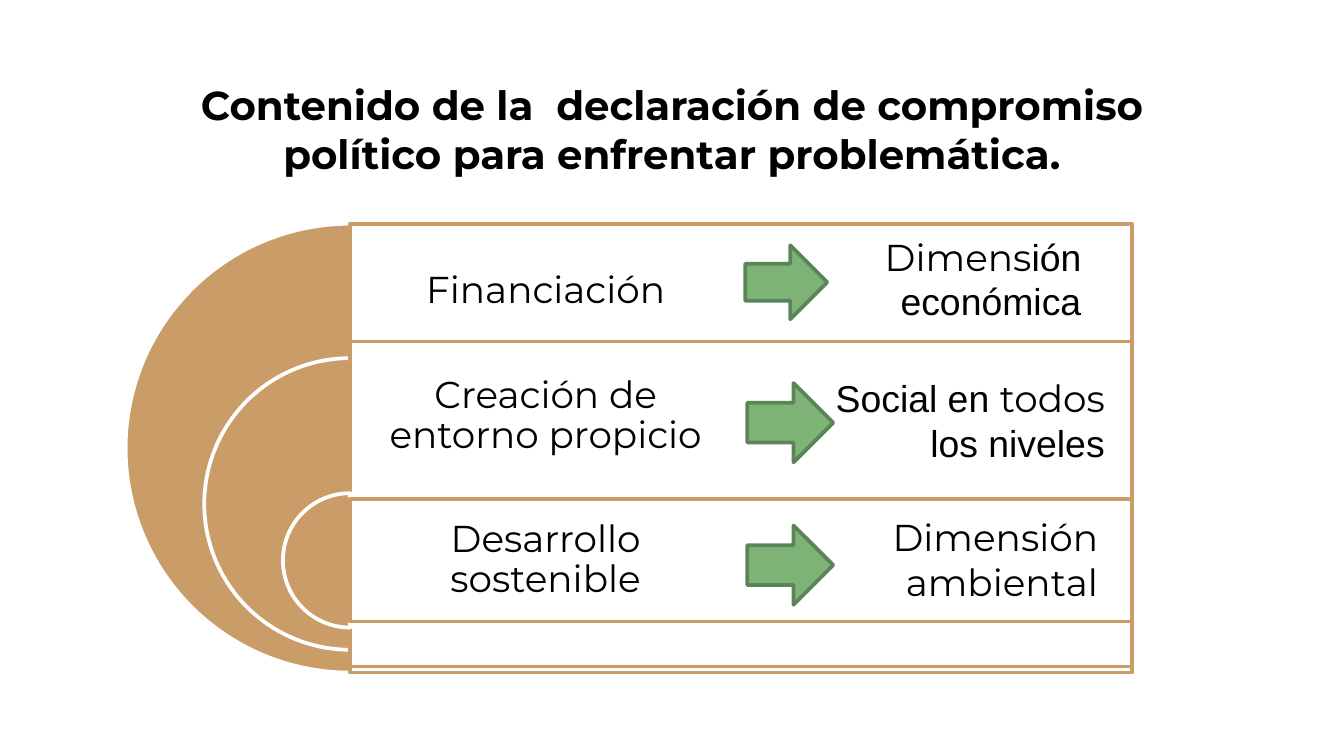
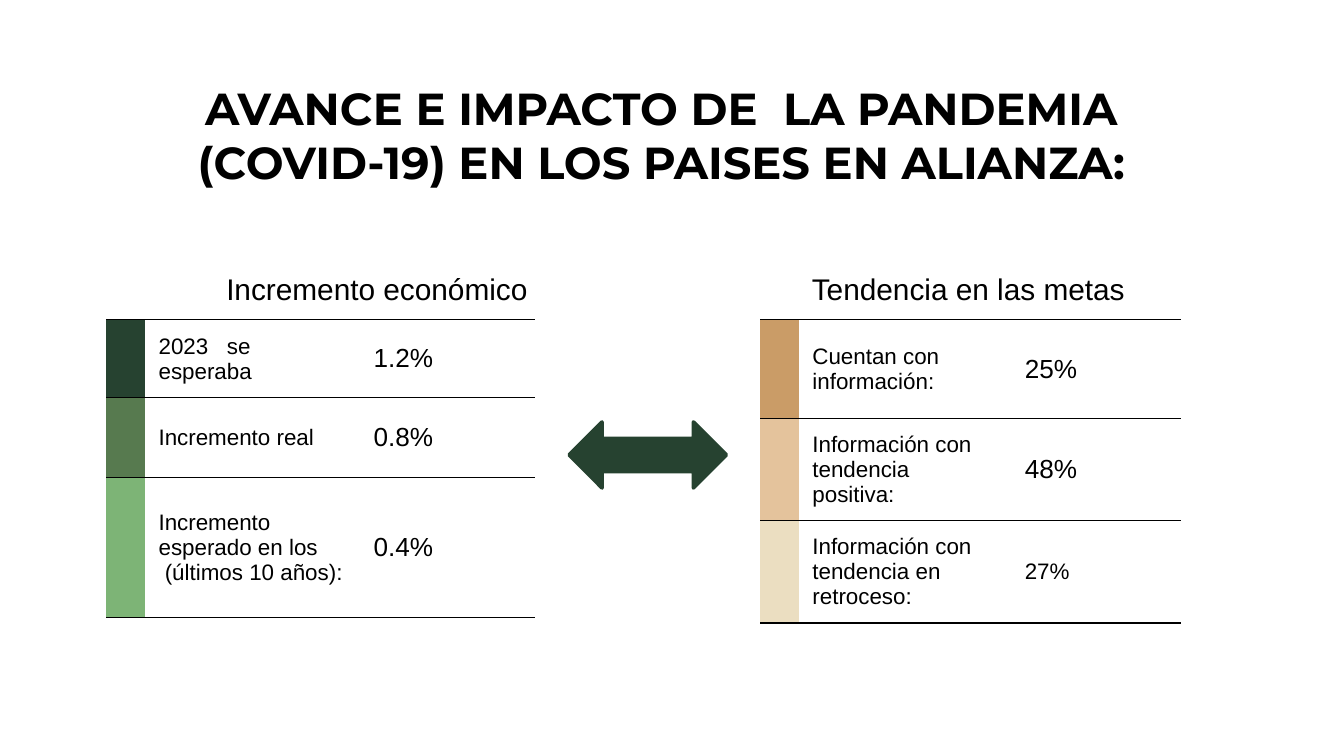
from lxml import etree
from pptx import Presentation
from pptx import util as u
from pptx.dml.color import RGBColor
from pptx.enum import shapes, text
from pptx.oxml import ns

COLORS = {
    "black": "000000", "white": "FFFFFF", "tan": "CA9C67", "sand": "E4C39C",
    "cream": "EBDEC1", "forest": "264230", "moss": "577A4F", "leaf": "7DB476",
    "leaf_edge": "5C8557",
}
HEADING_FONT = "Montserrat"
BODY_FONT = "Arial"
WIDTH = u.Inches(10)
HEIGHT = u.Emu(WIDTH * 9 // 16)
COLUMN, ROW = WIDTH / 100, HEIGHT / 56.25
WIDE_INSETS = (0.1, 0.1, 0.1, 0.1)
LABEL_INSETS = (0.08, 0.08, 0.08, 0.08)
BOX_INSETS = (0.1, 0.05, 0.1, 0.05)
LEFT, CENTER, RIGHT = text.PP_ALIGN.LEFT, text.PP_ALIGN.CENTER, text.PP_ALIGN.RIGHT
TOP, MIDDLE, BOTTOM = text.MSO_ANCHOR.TOP, text.MSO_ANCHOR.MIDDLE, text.MSO_ANCHOR.BOTTOM


def color(name):
    return RGBColor.from_string(COLORS[name])


def place(box):
    left, top, width, height = box
    return (u.Emu(round(left * COLUMN)), u.Emu(round(top * ROW)),
            u.Emu(round(width * COLUMN)), u.Emu(round(height * ROW)))


def child(parent, tag, **attributes):
    return etree.SubElement(parent, ns.qn(tag), attributes)


def style_run(run, size, font=BODY_FONT, bold=False):
    run.font.size = u.Pt(size)
    run.font.name = font
    run.font.bold = bold
    run.font.color.rgb = color("black")


def style_frame(frame, size, font, align, anchor, insets, bold=False):
    frame.word_wrap = True
    frame.auto_size = text.MSO_AUTO_SIZE.NONE
    frame.vertical_anchor = anchor
    (frame.margin_left, frame.margin_top,
     frame.margin_right, frame.margin_bottom) = map(u.Inches, insets)
    for paragraph in frame.paragraphs:
        paragraph.alignment = align
        for run in paragraph.runs:
            style_run(run, size, font, bold)


def add_titled_slide(presentation, title, box, size):
    slide = presentation.slides.add_slide(presentation.slide_layouts[5])
    shape = slide.shapes.title
    shape.left, shape.top, shape.width, shape.height = place(box)
    shape.text_frame.text = title
    style_frame(shape.text_frame, size, HEADING_FONT, CENTER, TOP, WIDE_INSETS, True)
    return slide


def add_label(slide, box, words, size, font, anchor, insets, spacing=1.0):
    shape = slide.shapes.add_textbox(*place(box))
    shape.text_frame.text = words
    style_frame(shape.text_frame, size, font, CENTER, anchor, insets)
    shape.text_frame.paragraphs[0].line_spacing = spacing


def add_mixed_text(slide, box, pieces):
    shape = slide.shapes.add_textbox(*place(box))
    paragraph = shape.text_frame.paragraphs[0]
    style_frame(shape.text_frame, 20, BODY_FONT, RIGHT, TOP, BOX_INSETS)
    for words, font, size in pieces:
        run = paragraph.add_run()
        run.text = words
        style_run(run, size, font)


def add_figure(slide, kind, box, fill, line):
    shape = slide.shapes.add_shape(kind, *place(box))
    shape.shadow.inherit = False
    shape.fill.solid()
    shape.fill.fore_color.rgb = color(fill)
    shape.line.color.rgb = color(line)
    shape.line.width = u.Pt(2)
    child(shape.line._get_or_add_ln(), "a:round")
    return shape


def add_half_disc(slide, axis, top, diameter):
    box = (axis - diameter / 2, top, diameter, diameter)
    disc = add_figure(slide, shapes.MSO_SHAPE.PIE, box, "tan", "white")
    disc.adjustments[0] = 54
    disc.adjustments[1] = 162


def add_panel(slide, box):
    panel = add_figure(slide, shapes.MSO_SHAPE.RECTANGLE, box, "white", "tan")
    fill = panel.fill._xPr.find(ns.qn("a:solidFill"))
    child(fill[0], "a:alpha", val="90000")


def rule_cell(cell):
    properties = cell._tc.get_or_add_tcPr()
    for position, side in enumerate(("L", "R", "T", "B")):
        line = etree.Element(ns.qn("a:ln" + side), w=str(u.Pt(0.75)))
        if side in "LR":
            child(line, "a:noFill")
        else:
            child(child(line, "a:solidFill"), "a:srgbClr", val=COLORS["black"])
        properties.insert(position, line)


def fill_cell(cell, words, size, fill=None):
    cell.text = words
    cell.vertical_anchor = MIDDLE
    (cell.margin_left, cell.margin_top,
     cell.margin_right, cell.margin_bottom) = map(u.Inches, WIDE_INSETS)
    for paragraph in cell.text_frame.paragraphs:
        paragraph.alignment = LEFT
        paragraph.font.size = u.Pt(size)
        for run in paragraph.runs:
            style_run(run, size)
    if fill:
        cell.fill.solid()
        cell.fill.fore_color.rgb = color(fill)
    else:
        cell.fill.background()
    rule_cell(cell)


def add_figures_table(slide, left, top, widths, heights, rows):
    box = (left, top, sum(widths), sum(heights))
    table = slide.shapes.add_table(len(rows), len(widths), *place(box)).table
    table.first_row = False
    table.horz_banding = False
    for column, width in zip(table.columns, widths):
        column.width = u.Emu(round(width * COLUMN))
    for row, height, (fill, label, value, size) in zip(table.rows, heights, rows):
        row.height = u.Emu(round(height * ROW))
        fill_cell(row.cells[0], "", 12, fill)
        fill_cell(row.cells[1], label, 12)
        fill_cell(row.cells[2], value, size)


def build_commitment(presentation):
    slide = add_titled_slide(
        presentation,
        "Contenido de la  declaración de compromiso político para enfrentar problemática.",
        (7.8, 5, 84.4, 6), 21.6)
    axis, panel_width = 26.05, 58.2
    layers = [
        (16.65, 33.4, 16.65, 33.4, 10, "Financiación"),
        (26.65, 21.7, 25.4, 24.2, 11.2, "Creación de entorno propicio"),
        (36.7, 10, 37.15, 9.1, 9.1, "Desarrollo sostenible"),
    ]
    for disc_top, diameter, top, height, label_height, words in layers:
        add_half_disc(slide, axis, disc_top, diameter)
        add_panel(slide, (axis, top, panel_width, height))
        add_label(slide, (axis, top, panel_width / 2, label_height), words,
                  20, HEADING_FONT, MIDDLE, LABEL_INSETS, 0.9)
    for box in ((55.45, 18.25, 6.1, 5.5), (55.6, 28.5, 6.4, 5.9), (55.6, 39.1, 6.4, 5.9)):
        add_figure(slide, shapes.MSO_SHAPE.RIGHT_ARROW, box, "leaf", "leaf_edge")
    dimensions = [
        ((64.1, 16.9, 17.35, 7.7), [("Dimens", HEADING_FONT, 20), ("ión", BODY_FONT, 20),
                                    (" ", BODY_FONT, 14), ("económica", BODY_FONT, 20)]),
        ((60.9, 27.45, 22.3, 7.7), [("Social en ", BODY_FONT, 20), ("todos", HEADING_FONT, 20),
                                    (" los niveles", BODY_FONT, 20)]),
        ((60.4, 37.8, 22.3, 7.7), [("Dimensión ambiental", HEADING_FONT, 20)]),
    ]
    for box, pieces in dimensions:
        add_mixed_text(slide, box, pieces)


def build_pandemic(presentation):
    slide = add_titled_slide(
        presentation,
        "AVANCE E IMPACTO DE  LA PANDEMIA (COVID-19) EN LOS PAISES EN ALIANZA:",
        (6.2, 5, 86, 6), 24)
    table_top, heading_height = 23.8, 4.1
    for left, words in ((7.9, "Incremento económico"), (51.9, "Tendencia en las metas")):
        add_label(slide, (left, table_top - heading_height, 40.3, heading_height), words,
                  16, BODY_FONT, BOTTOM, WIDE_INSETS)
    add_figures_table(slide, 7.9, table_top, (2.9, 16, 13), (5.8, 5.95, 10.4), [
        ("forest", "2023   se esperaba", "1.2%", 14),
        ("moss", "Incremento real", "0.8%", 14),
        ("leaf", "Incremento esperado en los\v (últimos 10 años):", "0.4%", 14),
    ])
    add_figures_table(slide, 56.55, table_top, (2.9, 15.8, 12.6), (7.35, 7.6, 7.6), [
        ("tan", "Cuentan con información: ", "25%", 14),
        ("sand", "Información con tendencia \npositiva: ", "48%", 14),
        ("cream", "Información con tendencia en retroceso: ", "27% ", 12),
    ])
    add_figure(slide, shapes.MSO_SHAPE.LEFT_RIGHT_ARROW, (42.35, 31.4, 11.7, 4.9),
               "forest", "forest")


def main():
    presentation = Presentation()
    presentation.slide_width, presentation.slide_height = WIDTH, HEIGHT
    build_commitment(presentation)
    build_pandemic(presentation)
    presentation.save("out.pptx")


main()
